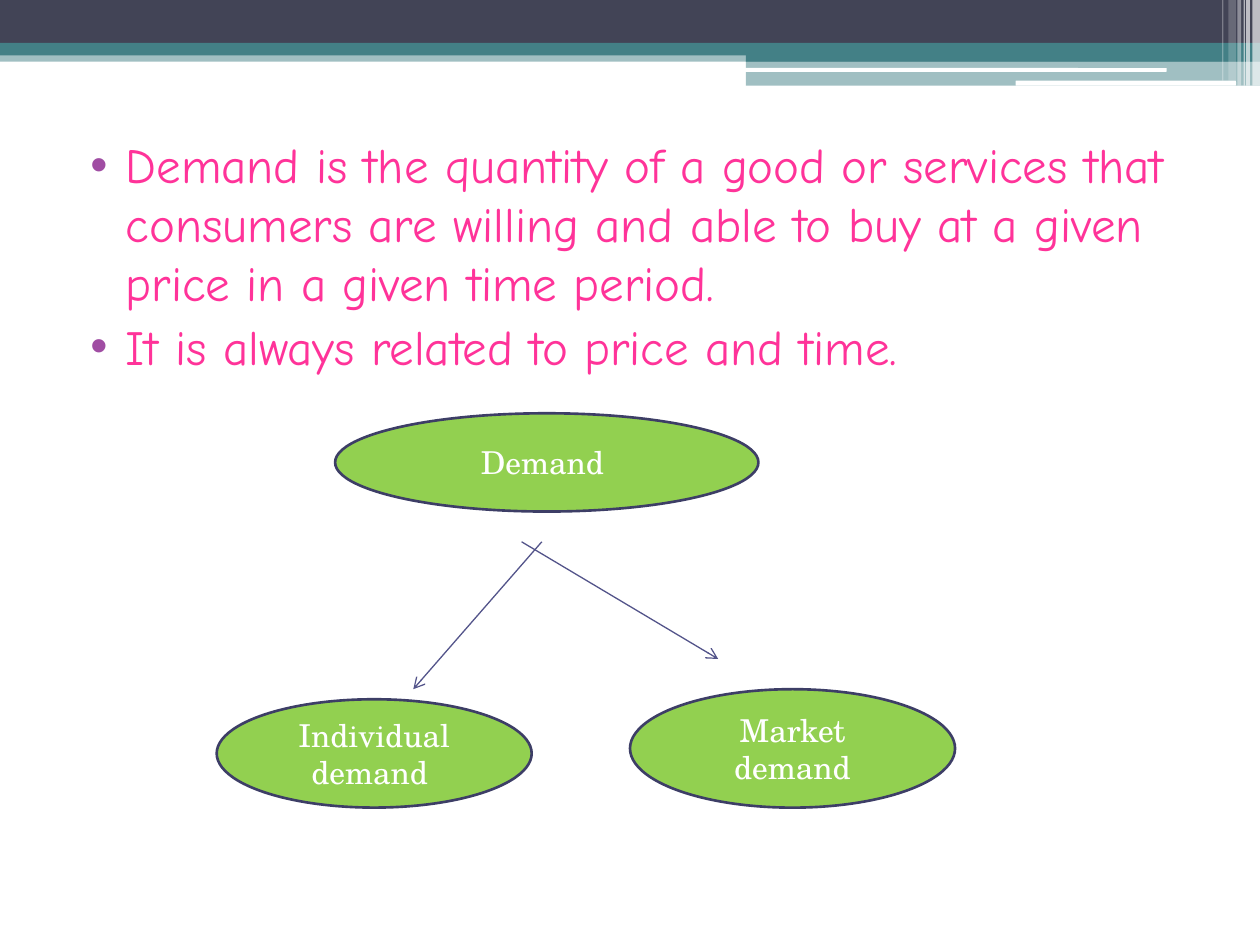
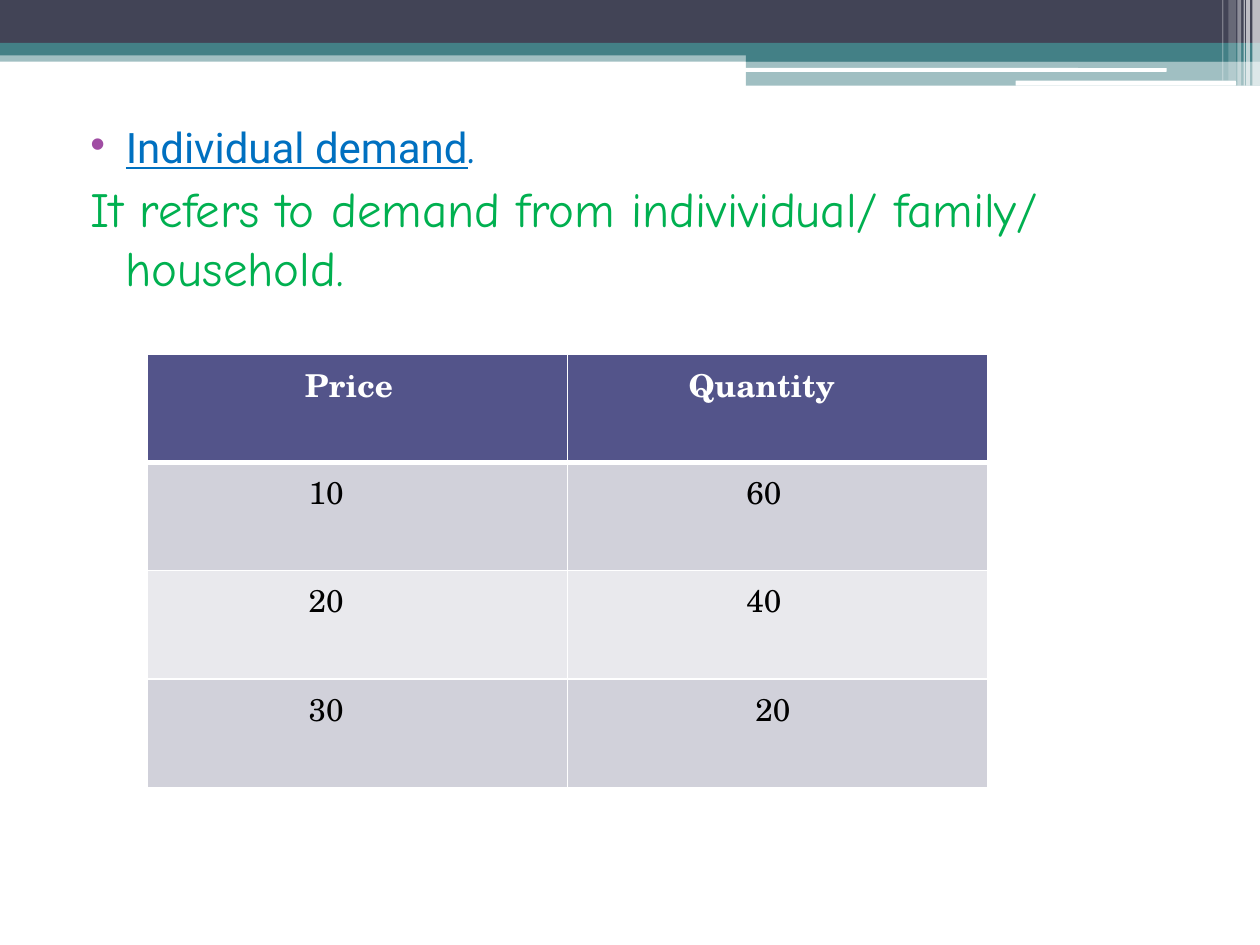
"""Build two slides on demand: its definition and individual demand."""
from lxml import etree
from pptx import Presentation, util as u
from pptx.dml.color import RGBColor
from pptx.enum import shapes, text
from pptx.oxml.ns import qn

WHITE = RGBColor(0xFF, 0xFF, 0xFF)
BLACK = RGBColor(0, 0, 0)
TEAL = RGBColor(0x43, 0x80, 0x86)
SLATE = RGBColor(0x42, 0x44, 0x56)
INDIGO = RGBColor(0x53, 0x54, 0x8A)
EDGE = RGBColor(0x3D, 0x3E, 0x66)
LIME = RGBColor(0x92, 0xD0, 0x50)
PINK = RGBColor(0xFF, 0x33, 0x99)
BLUE = RGBColor(0x00, 0x70, 0xC0)
GREEN = RGBColor(0x00, 0xB0, 0x50)
PURPLE = RGBColor(0xA0, 0x4D, 0xA3)
ROWS = [RGBColor(0xD1, 0xD1, 0xDA), RGBColor(0xE9, 0xE9, 0xED)]
COMIC, ROBOTO, SERIF = "Comic Neue", "Roboto", "TeX Gyre Schola"
RECT = shapes.MSO_SHAPE.RECTANGLE
ROUND = shapes.MSO_SHAPE.ROUNDED_RECTANGLE
OVAL = shapes.MSO_SHAPE.OVAL

BANDS = [
    (RECT, 0, 0.4, 10, 0.09, TEAL, 50),
    (RECT, 0, 0, 10, 0.34, SLATE, 100),
    (RECT, 0, 0.34, 10, 0.1, TEAL, 100),
    (RECT, 5.92, 0.39, 4.08, 0.1, TEAL, 100),
    (RECT, 5.92, 0.48, 4.08, 0.2, TEAL, 50),
    (ROUND, 5.91, 0.54, 3.35, 0.03, WHITE, 100),
    (ROUND, 8.06, 0.64, 1.75, 0.04, WHITE, 100),
]
STRIPES = [
    (9.94, 0.06, 0.68, 65), (9.89, 0.03, 0.68, 65), (9.87, 0.01, 0.68, 60),
    (9.82, 0.03, 0.68, 40), (9.75, 0.06, 0.64, 20), (9.7, 0.01, 0.64, 30),
]


def add(node, tag, **attrs):
    return etree.SubElement(node, qn(tag), **attrs)


class Deck:
    def __init__(self):
        self.prs = Presentation()
        self.prs.slide_width, self.prs.slide_height = u.Inches(10), u.Inches(7.5)

    def page(self):
        self.slide = self.prs.slides.add_slide(self.prs.slide_layouts[6])
        for kind, x, y, w, h, fill, alpha in BANDS:
            self.shape(kind, x, y, w, h, fill, alpha)
        for x, w, h, alpha in STRIPES:
            self.shape(RECT, x, 0, w, h, WHITE, alpha)

    def shape(self, kind, x, y, w, h, fill, alpha=100):
        item = self.slide.shapes.add_shape(kind, *map(u.Inches, (x, y, w, h)))
        item.shadow.inherit = False
        item.fill.solid()
        item.fill.fore_color.rgb = fill
        item.line.fill.background()
        if alpha < 100:
            tint = item._element.spPr.find(".//" + qn("a:srgbClr"))
            add(tint, "a:alpha", val=str(alpha * 1000))
        return item

    def run(self, para, words, font, size, color, bold=False, under=False):
        run = para.add_run()
        run.text = words
        run.font.name, run.font.size = font, u.Pt(size)
        run.font.color.rgb = color
        run.font.bold, run.font.underline = bold, under

    def body(self, top, paras):
        box = self.slide.shapes.add_textbox(
            u.Inches(0.5), u.Inches(top), u.Inches(9), u.Inches(7.19 - top))
        frame = box.text_frame
        frame.word_wrap = True
        for i, (bullet, runs) in enumerate(paras):
            para = frame.add_paragraph() if i else frame.paragraphs[0]
            props = para._p.get_or_add_pPr()
            props.set("marL", str(u.Inches(0.4)))
            props.set("indent", str(u.Inches(-0.28)))
            if bullet:
                add(add(props, "a:buClr"), "a:srgbClr", val=str(PURPLE))
                add(props, "a:buFont", typeface="Arial")
                add(props, "a:buChar", char="•")
            else:
                add(props, "a:buNone")
            if i:
                para.space_before = u.Pt(3)
            for run in runs:
                self.run(para, *run)

    def oval(self, x, y, w, h, words):
        item = self.shape(OVAL, x, y, w, h, LIME)
        item.line.color.rgb, item.line.width = EDGE, u.Pt(1.5)
        frame = item.text_frame
        frame.word_wrap = True
        frame.vertical_anchor = text.MSO_ANCHOR.MIDDLE
        para = frame.paragraphs[0]
        para.alignment = text.PP_ALIGN.CENTER
        self.run(para, words, SERIF, 18, WHITE)

    def arrow(self, *ends):
        item = self.slide.shapes.add_connector(
            shapes.MSO_CONNECTOR.STRAIGHT, *map(u.Inches, ends))
        item.line.color.rgb, item.line.width = INDIGO, u.Pt(0.75)
        add(item.line._get_or_add_ln(), "a:tailEnd", type="arrow")
        add(item._element.spPr, "a:effectLst")

    def border(self, cell, thick):
        props = cell._tc.get_or_add_tcPr()
        for i, side in enumerate("LRTB"):
            width = u.Pt(3 if side == thick else 1)
            line = etree.Element(qn("a:ln" + side), w=str(width))
            add(add(line, "a:solidFill"), "a:srgbClr", val=str(WHITE))
            props.insert(i, line)

    def table(self, x, y, w, h, rows):
        grid = self.slide.shapes.add_table(
            len(rows), len(rows[0]), *map(u.Inches, (x, y, w, h))).table
        for r, row in enumerate(rows):
            for c, (words, inset) in enumerate(row):
                cell = grid.cell(r, c)
                cell.margin_left = u.Inches(inset)
                cell.fill.solid()
                cell.fill.fore_color.rgb = ROWS[(r - 1) % 2] if r else INDIGO
                self.border(cell, {0: "B", 1: "T"}.get(r))
                self.run(cell.text_frame.paragraphs[0], words, SERIF, 18,
                         BLACK if r else WHITE, bold=not r)


def main():
    deck = Deck()
    deck.page()
    facts = [
        "Demand is the quantity of a good or services that consumers are "
        "willing and able to buy at a given price in a given time period.",
        "It is always related to price and time.",
    ]
    deck.body(1.02, [(True, [(fact, COMIC, 28, PINK)]) for fact in facts])
    deck.oval(2.66, 3.28, 3.36, 0.78, "Demand ")
    deck.arrow(4.3, 4.3, 3.28, 5.47)
    deck.arrow(4.14, 4.3, 5.7, 5.23)
    deck.oval(1.72, 5.55, 2.5, 0.86, "Individual demand ")
    deck.oval(5, 5.47, 2.58, 0.94, "Market demand")

    deck.page()
    deck.body(0.86, [
        (True, [("Individual demand", ROBOTO, 24, BLUE, False, True),
                (".", COMIC, 28, BLUE)]),
        (False, [("It refers to demand from indivividual/ family/ household.",
                  COMIC, 28, GREEN)]),
    ])
    deck.table(1.17, 2.81, 6.67, 3.44, [
        [("Price", 1.25), ("Quantity", 0.96)],
        [("10", 1.28), ("60", 1.42)],
        [("20", 1.28), ("40", 1.42)],
        [("30", 1.28), ("20", 1.49)],
    ])
    deck.prs.save("out.pptx")


if __name__ == "__main__":
    main()
